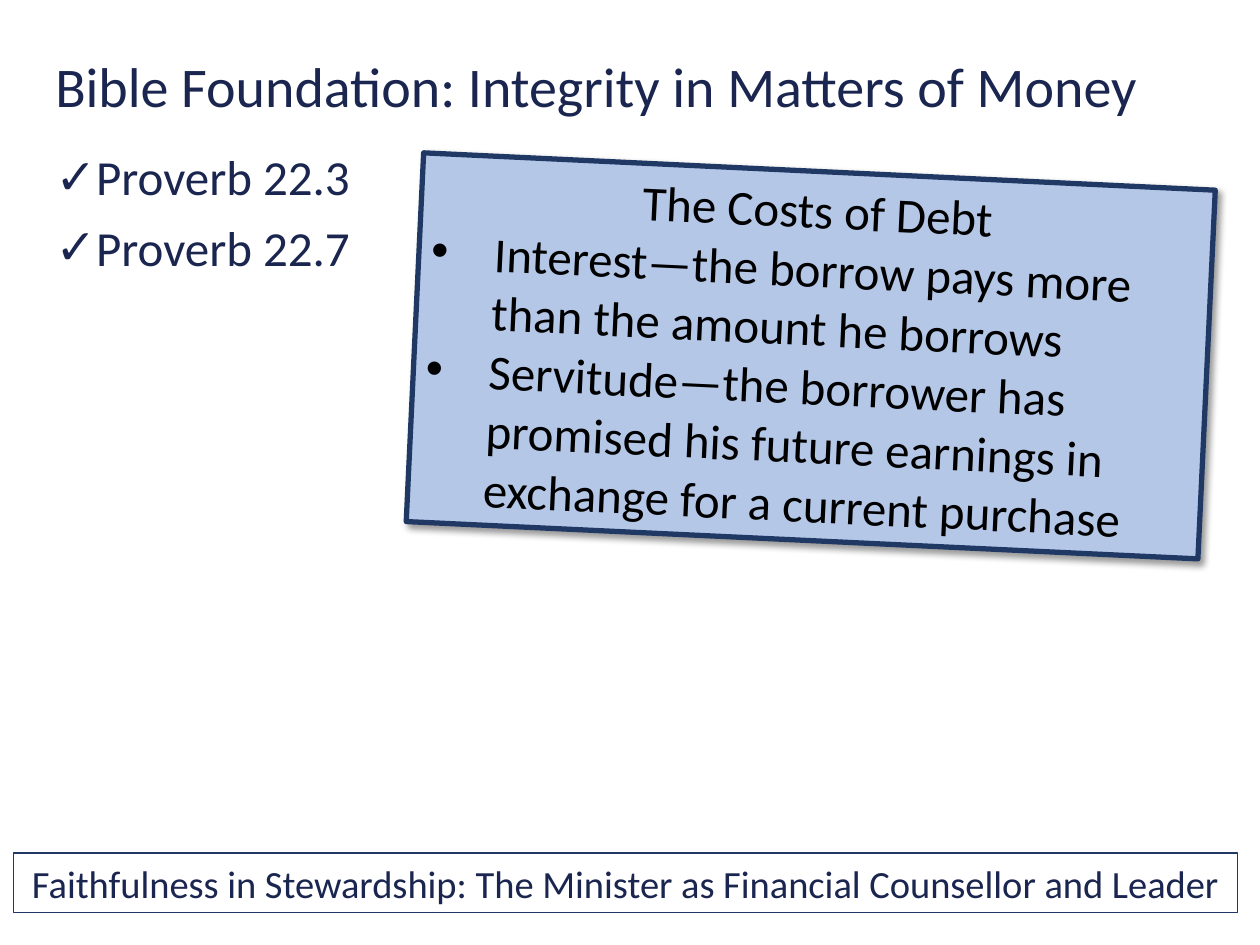
from lxml import etree
from pptx import Presentation
from pptx.dml.color import RGBColor
from pptx.enum import shapes, text
from pptx.oxml import parse_xml
from pptx.oxml.ns import nsdecls, qn
from pptx.util import Inches, Pt

NAVY = RGBColor(0x1A, 0x26, 0x4F)
BORDER = RGBColor(0x20, 0x38, 0x64)
PALE_BLUE = RGBColor(0xB4, 0xC7, 0xE7)
BLACK = RGBColor(0, 0, 0)
FONT = "Calibri"

VERSES = ["Proverb 22.3", "Proverb 22.7"]
COSTS = [
    "Interest—the borrow pays more than the amount he borrows",
    "Servitude—the borrower has promised his future earnings in "
    "exchange for a current purchase",
]


def add_bullet(paragraph, mark, indent):
    """Give the paragraph a bullet hanging by indent inches."""
    props = paragraph._p.get_or_add_pPr()
    props.set("marL", str(Inches(indent)))
    props.set("indent", str(-Inches(indent)))
    etree.SubElement(props, qn("a:buFont"), typeface="Arial")
    etree.SubElement(props, qn("a:buChar"), char=mark)


def write(paragraph, words, size, color, align=text.PP_ALIGN.LEFT):
    paragraph.alignment = align
    run = paragraph.add_run()
    run.text = words
    run.font.name = FONT
    run.font.size = Pt(size)
    run.font.color.rgb = color


def add_text_area(slide, box):
    frame = slide.shapes.add_textbox(*map(Inches, box)).text_frame
    frame.word_wrap = True
    return frame


def add_panel(slide, box, line_width):
    panel = slide.shapes.add_shape(
        shapes.MSO_SHAPE.RECTANGLE, *map(Inches, box))
    panel.shadow.inherit = False
    panel.fill.background()
    panel.line.color.rgb = BORDER
    panel.line.width = Pt(line_width)
    panel.text_frame.word_wrap = True
    return panel


def add_shadow(shape):
    effects = shape._element.spPr.find(qn("a:effectLst"))
    effects.append(parse_xml(
        f'<a:outerShdw {nsdecls("a")} blurRad="{Pt(4)}" dist="{Pt(3)}" '
        'dir="2700000" algn="tl" rotWithShape="0">'
        '<a:srgbClr val="000000"><a:alpha val="40000"/></a:srgbClr>'
        '</a:outerShdw>'))


def add_verses(slide, box):
    frame = add_text_area(slide, box)
    for index, verse in enumerate(VERSES):
        paragraph = frame.add_paragraph() if index else frame.paragraphs[0]
        add_bullet(paragraph, "✓", 0.25)
        paragraph.line_spacing = 0.9
        if index:
            paragraph.space_before = Pt(10)
        write(paragraph, verse, 28, NAVY)


def add_title(slide, box):
    frame = add_text_area(slide, box)
    write(frame.paragraphs[0],
          "Bible Foundation: Integrity in Matters of Money", 32, NAVY)


def add_footer(slide, box):
    footer = add_panel(slide, box, 0.75)
    write(footer.text_frame.paragraphs[0],
          "Faithfulness in Stewardship: The Minister as Financial "
          "Counsellor and Leader", 22, NAVY, text.PP_ALIGN.CENTER)


def add_debt_card(slide, box):
    card = add_panel(slide, box, 3)
    card.fill.solid()
    card.fill.fore_color.rgb = PALE_BLUE
    card.rotation = 2.7
    add_shadow(card)
    frame = card.text_frame
    write(frame.paragraphs[0], "The Costs of Debt", 28, BLACK,
          text.PP_ALIGN.CENTER)
    for cost in COSTS:
        paragraph = frame.add_paragraph()
        add_bullet(paragraph, "•", 0.5)
        write(paragraph, cost, 28, BLACK)


def main():
    deck = Presentation()
    deck.slide_width, deck.slide_height = Inches(10), Inches(7.5)
    slide = deck.slides.add_slide(deck.slide_layouts[6])
    add_verses(slide, (0.34, 1.17, 9.32, 5.52))
    add_title(slide, (0.34, 0.36, 9.32, 0.64))
    add_footer(slide, (0.11, 6.77, 9.71, 0.47))
    add_debt_card(slide, (3.29, 1.36, 6.29, 2.93))
    deck.save("out.pptx")


if __name__ == "__main__":
    main()
